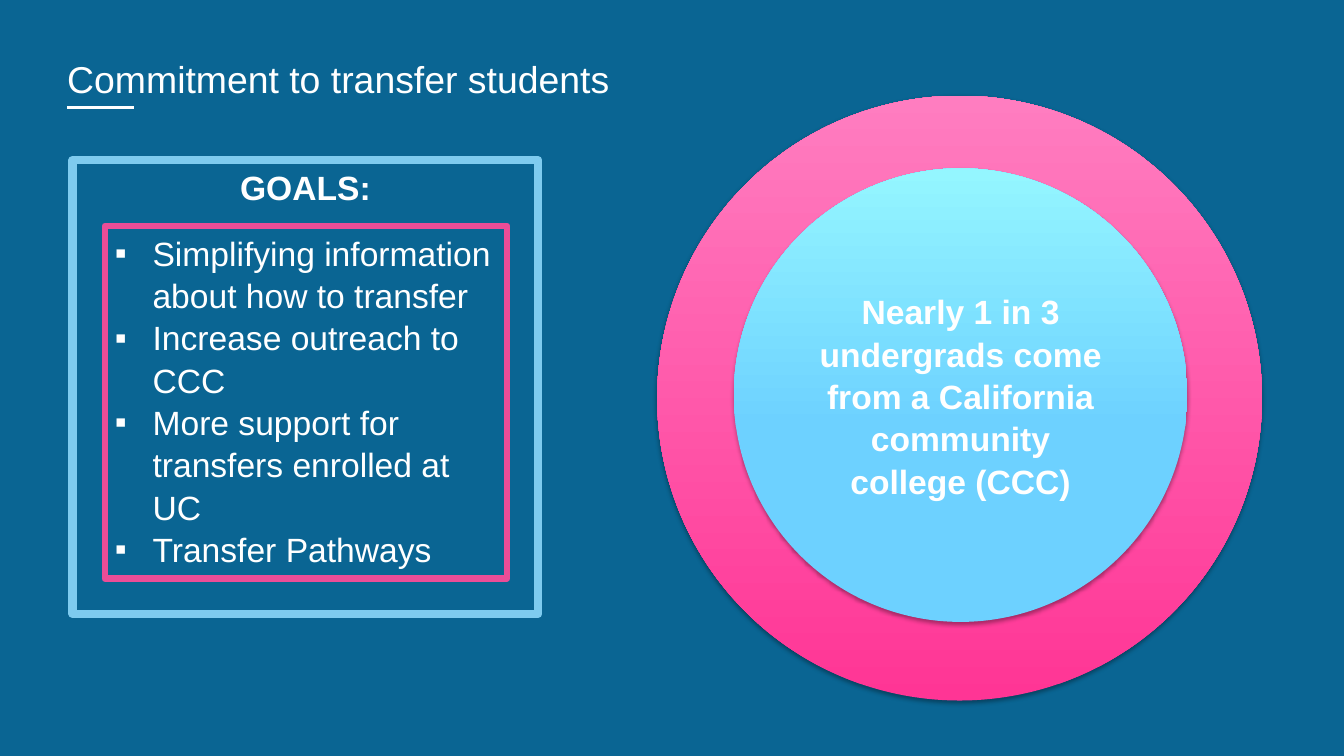
"""Builds a slide on the commitment to transfer students."""
from lxml import etree
from pptx import Presentation
from pptx.dml.color import RGBColor
from pptx.enum.shapes import MSO_CONNECTOR, MSO_SHAPE
from pptx.enum.text import MSO_ANCHOR, PP_ALIGN
from pptx.oxml import parse_xml
from pptx.oxml.ns import nsdecls, qn
from pptx.util import Pt

RECT, CIRCLE = MSO_SHAPE.RECTANGLE, MSO_SHAPE.FLOWCHART_CONNECTOR
STRAIGHT = MSO_CONNECTOR.STRAIGHT
LEFT, CENTER = PP_ALIGN.LEFT, PP_ALIGN.CENTER
TOP, MIDDLE = MSO_ANCHOR.TOP, MSO_ANCHOR.MIDDLE

NAVY = RGBColor(0x0A, 0x65, 0x93)
WHITE = RGBColor(0xFF, 0xFF, 0xFF)
SKY = RGBColor(0x7E, 0xCB, 0xEF)
PINK = RGBColor(0xEB, 0x4D, 0x97)
HOT_PINK = RGBColor(0xFF, 0x35, 0x95)
LIGHT_PINK = RGBColor(0xFF, 0x7D, 0xC0)
BLUE = RGBColor(0x6D, 0xD1, 0xFF)
AQUA = RGBColor(0x94, 0xF6, 0xFF)

TITLE = "Commitment to transfer students"
HEADING = "GOALS:"
GOALS = [
    "Simplifying information about how to transfer",
    "Increase outreach to CCC",
    "More support for transfers enrolled at UC",
    "Transfer Pathways",
]
FACT = "Nearly 1 in 3 undergrads come from a California community college (CCC)"

BODY = {"name": "Arial", "size": Pt(24), "bold": False}
STRONG = {**BODY, "bold": True}
HEADLINE = {**BODY, "size": Pt(26.7)}
INDENT = Pt(27)

FRAMES = [
    ((51.84, 114.48, 332.64, 324), SKY, 6, [HEADING], STRONG, CENTER, False),
    ((74.88, 161.28, 287.28, 252), PINK, 4.5, GOALS, BODY, LEFT, True),
]
CIRCLES = [
    ((469.44, 68.4, 432, 432), [(0, HOT_PINK), (100, LIGHT_PINK)], []),
    ((524.16, 120.24, 324, 324), [(0, BLUE), (43, BLUE), (100, AQUA)], [FACT]),
]


def write(shape, lines, style, align, anchor=TOP, bulleted=False):
    tf = shape.text_frame
    tf.word_wrap = True
    tf.vertical_anchor = anchor
    for i, line in enumerate(lines):
        p = tf.paragraphs[0] if i == 0 else tf.add_paragraph()
        p.alignment = align
        p.line_spacing = 1.05
        if bulleted:
            pPr = p._p.get_or_add_pPr()
            pPr.set("marL", str(INDENT))
            pPr.set("indent", str(-INDENT))
            color = etree.SubElement(pPr, qn("a:buClr"))
            etree.SubElement(color, qn("a:srgbClr"), val=str(WHITE))
            etree.SubElement(pPr, qn("a:buFont"), typeface="Arial")
            etree.SubElement(pPr, qn("a:buChar"), char="▪")
        r = p.add_run()
        r.text = line
        for name, value in style.items():
            setattr(r.font, name, value)
        r.font.color.rgb = WHITE


def add_frame(s, box, color, weight):
    sp = s.shapes.add_shape(RECT, *map(Pt, box))
    sp.shadow.inherit = False
    sp.fill.background()
    sp.line.color.rgb = color
    sp.line.width = Pt(weight)
    etree.SubElement(sp.line._get_or_add_ln(), qn("a:round"))
    return sp


def add_circle(s, box, stops):
    sp = s.shapes.add_shape(CIRCLE, *map(Pt, box))
    sp.line.fill.background()
    stop_xml = "".join(
        f'<a:gs pos="{pos * 1000}"><a:srgbClr val="{color}"/></a:gs>'
        for pos, color in stops)
    gradient = parse_xml(
        f'<a:gradFill {nsdecls("a")} rotWithShape="1"><a:gsLst>{stop_xml}</a:gsLst>'
        '<a:lin ang="16200000" scaled="0"/></a:gradFill>')
    shadow = parse_xml(
        f'<a:effectLst {nsdecls("a")}><a:outerShdw blurRad="{Pt(3.1)}" '
        f'dist="{Pt(1.8)}" dir="5400000" rotWithShape="0"><a:srgbClr val="000000">'
        '<a:alpha val="35000"/></a:srgbClr></a:outerShdw></a:effectLst>')
    spPr = sp._element.spPr
    spPr.find(qn("a:prstGeom")).addnext(gradient)
    spPr.append(shadow)
    return sp


def main():
    prs = Presentation()
    prs.slide_width, prs.slide_height = Pt(960), Pt(540)
    s = prs.slides.add_slide(prs.slide_layouts[6])
    s.background.fill.solid()
    s.background.fill.fore_color.rgb = NAVY

    rule = s.shapes.add_connector(STRAIGHT, *map(Pt, (47.8, 76.8, 95.8, 76.8)))
    rule.line.color.rgb = WHITE
    rule.line.width = Pt(2)
    etree.SubElement(rule._element.spPr, qn("a:effectLst"))

    title = s.shapes.add_textbox(*map(Pt, (48, 38.16, 864, 32.4)))
    for side in ("left", "top", "right", "bottom"):
        setattr(title.text_frame, f"margin_{side}", 0)
    write(title, [TITLE], HEADLINE, LEFT)

    for box, color, weight, lines, style, align, bulleted in FRAMES:
        write(add_frame(s, box, color, weight), lines, style, align, TOP, bulleted)
    for box, stops, lines in CIRCLES:
        write(add_circle(s, box, stops), lines, STRONG, CENTER, MIDDLE)

    prs.save("out.pptx")


if __name__ == "__main__":
    main()
